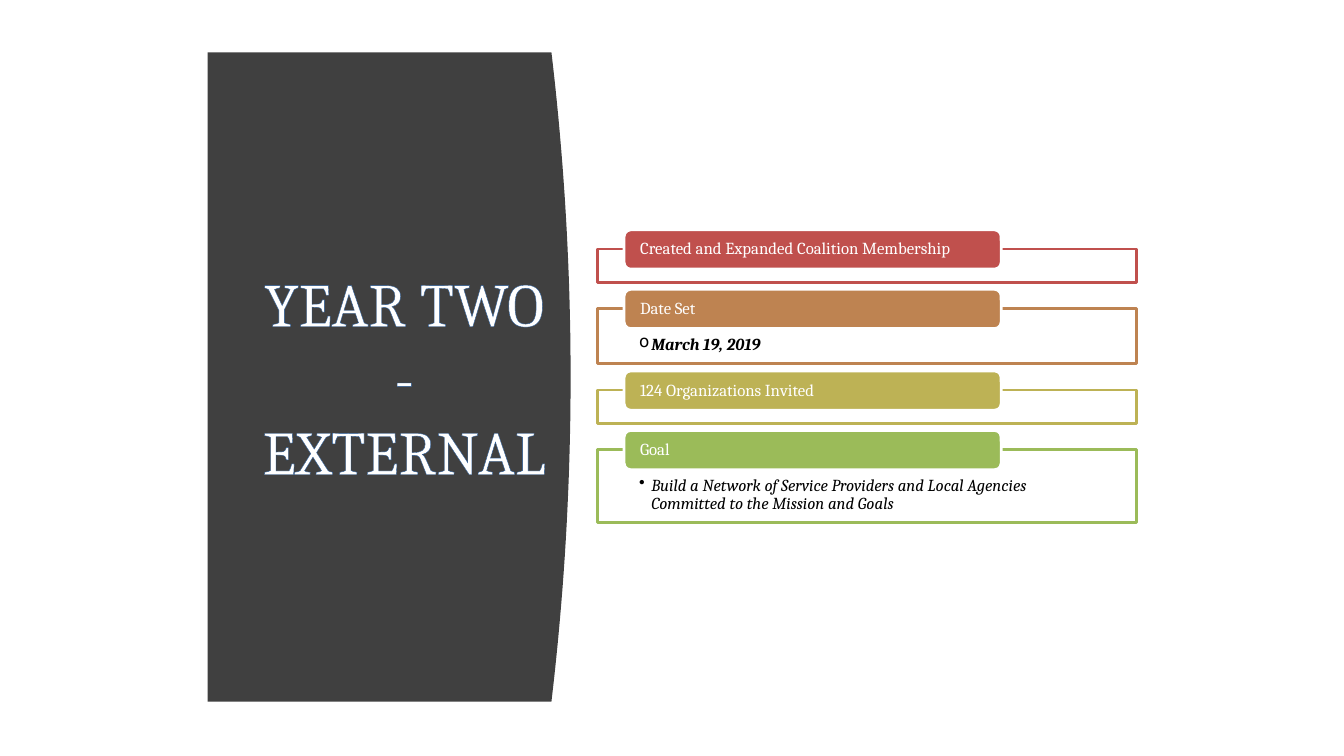
from lxml import etree
from pptx import Presentation
from pptx.dml.color import RGBColor
from pptx.enum import shapes, text
from pptx.oxml import ns
from pptx.util import Inches, Pt

# Content: heading, frame height, colour, bullet, detail, detail is bold
TITLE = "YEAR TWO - EXTERNAL"
SECTIONS = [
    ("Created and Expanded Coalition Membership", 0.33, "red", None, None, False),
    ("Date Set", 0.55, "copper", "o", "March 19, 2019", True),
    ("124 Organizations Invited", 0.33, "gold", None, None, False),
    ("Goal", 0.72, "green", "•", "Build a Network of Service Providers and Local "
     "Agencies Committed to the Mission and Goals", False),
]
COLORS = {"panel": "404040", "white": "FFFFFF", "black": "000000", "outline": "265A99",
          "red": "C0504D", "copper": "BE8351", "gold": "BDB255", "green": "9BBB59"}
FONT = "Cambria"

# Layout in inches
PANEL_LEFT, PANEL_TOP, PANEL_BOTTOM = 2.06, 0.52, 6.96
EDGE_X, BULGE, EDGE_STEPS = 5.47, 0.19, 40
FRAME_LEFT, FRAME_WIDTH, FIRST_TOP, GAP = 5.93, 5.34, 2.47, 0.26
TAB_LEFT, TAB_WIDTH, TAB_HEIGHT, TAB_RISE = 6.19, 3.74, 0.39, 0.19


def color(name):
    return RGBColor.from_string(COLORS[name])


def add_element(parent, tag, **attributes):
    return etree.SubElement(parent, ns.qn(tag), attributes)


def paint(shape, fill, line):
    shape.shadow.inherit = False
    shape.fill.solid()
    shape.fill.fore_color.rgb = color(fill)
    shape.line.color.rgb = color(line)
    shape.line.width = Pt(2)


def set_frame(shape, anchor, insets):
    frame = shape.text_frame
    frame.word_wrap = True
    frame.auto_size = text.MSO_AUTO_SIZE.NONE
    frame.vertical_anchor = anchor
    (frame.margin_left, frame.margin_top,
     frame.margin_right, frame.margin_bottom) = map(Inches, insets)
    return frame.paragraphs[0]


def write(para, words, size, ink, align, bold=False, italic=False):
    para.alignment = align
    span = para.add_run()
    span.text = words
    span.font.name = FONT
    span.font.size = Pt(size)
    span.font.color.rgb = color(ink)
    span.font.bold = bold
    span.font.italic = italic
    return span


def add_box(page, kind, left, top, width, height):
    return page.shapes.add_shape(kind, *map(Inches, (left, top, width, height)))


def add_panel(page):
    middle = (PANEL_TOP + PANEL_BOTTOM) / 2
    half = (PANEL_BOTTOM - PANEL_TOP) / 2
    edge = []
    for step in range(EDGE_STEPS + 1):
        offset = 2 * step / EDGE_STEPS - 1
        edge.append((Inches(EDGE_X + BULGE * (1 - offset ** 2)),
                     Inches(middle + half * offset)))
    builder = page.shapes.build_freeform(Inches(PANEL_LEFT), Inches(PANEL_TOP))
    builder.add_line_segments(edge + [(Inches(PANEL_LEFT), Inches(PANEL_BOTTOM))])
    panel = builder.convert_to_shape()
    paint(panel, "panel", "panel")
    panel.line.fill.background()
    # Place the panel behind the title
    page.shapes._spTree.insert(2, panel._element)


def add_title(page):
    title = page.shapes.title
    title.left, title.top, title.width, title.height = map(
        Inches, (2.37, 1.11, 3.28, 5.24))
    para = set_frame(title, text.MSO_ANCHOR.MIDDLE, (0.1, 0.05, 0.1, 0.05))
    span = write(para, TITLE, 44, "white", text.PP_ALIGN.CENTER)
    # Thin outline around the letters
    outline = etree.Element(ns.qn("a:ln"), w=str(Pt(0.75)))
    fill = add_element(outline, "a:solidFill")
    add_element(fill, "a:srgbClr", val=COLORS["outline"])
    span.font._element.insert(0, outline)


def add_section(page, top, heading, height, tint, bullet, detail, bold):
    # Outlined frame with its detail
    frame = add_box(page, shapes.MSO_SHAPE.RECTANGLE,
                    FRAME_LEFT, top, FRAME_WIDTH, height)
    paint(frame, "white", tint)
    white = frame._element.spPr.find(ns.qn("a:solidFill"))[0]
    add_element(white, "a:alpha", val="90000")
    if detail:
        para = set_frame(frame, text.MSO_ANCHOR.TOP, (0.41, 0.27, 0.41, 0.09))
        para.line_spacing = 0.9
        settings = para._p.get_or_add_pPr()
        settings.set("marL", str(Inches(0.12)))
        settings.set("indent", str(-Inches(0.12)))
        add_element(settings, "a:buChar", char=bullet)
        write(para, detail, 12, "black", text.PP_ALIGN.LEFT, bold, True)

    # Heading tab over the frame's top edge
    tab = add_box(page, shapes.MSO_SHAPE.ROUNDED_RECTANGLE,
                  TAB_LEFT, top - TAB_RISE, TAB_WIDTH, TAB_HEIGHT)
    paint(tab, tint, "white")
    para = set_frame(tab, text.MSO_ANCHOR.MIDDLE, (0.14, 0, 0.14, 0))
    para.line_spacing = 0.9
    write(para, heading, 12, "white", text.PP_ALIGN.LEFT)


def main():
    deck = Presentation()
    deck.slide_width, deck.slide_height = Inches(13.33), Inches(7.5)
    page = deck.slides.add_slide(deck.slide_layouts[5])
    add_panel(page)
    add_title(page)
    top = FIRST_TOP
    for heading, height, *rest in SECTIONS:
        add_section(page, top, heading, height, *rest)
        top += height + GAP
    deck.save("out.pptx")


if __name__ == "__main__":
    main()
